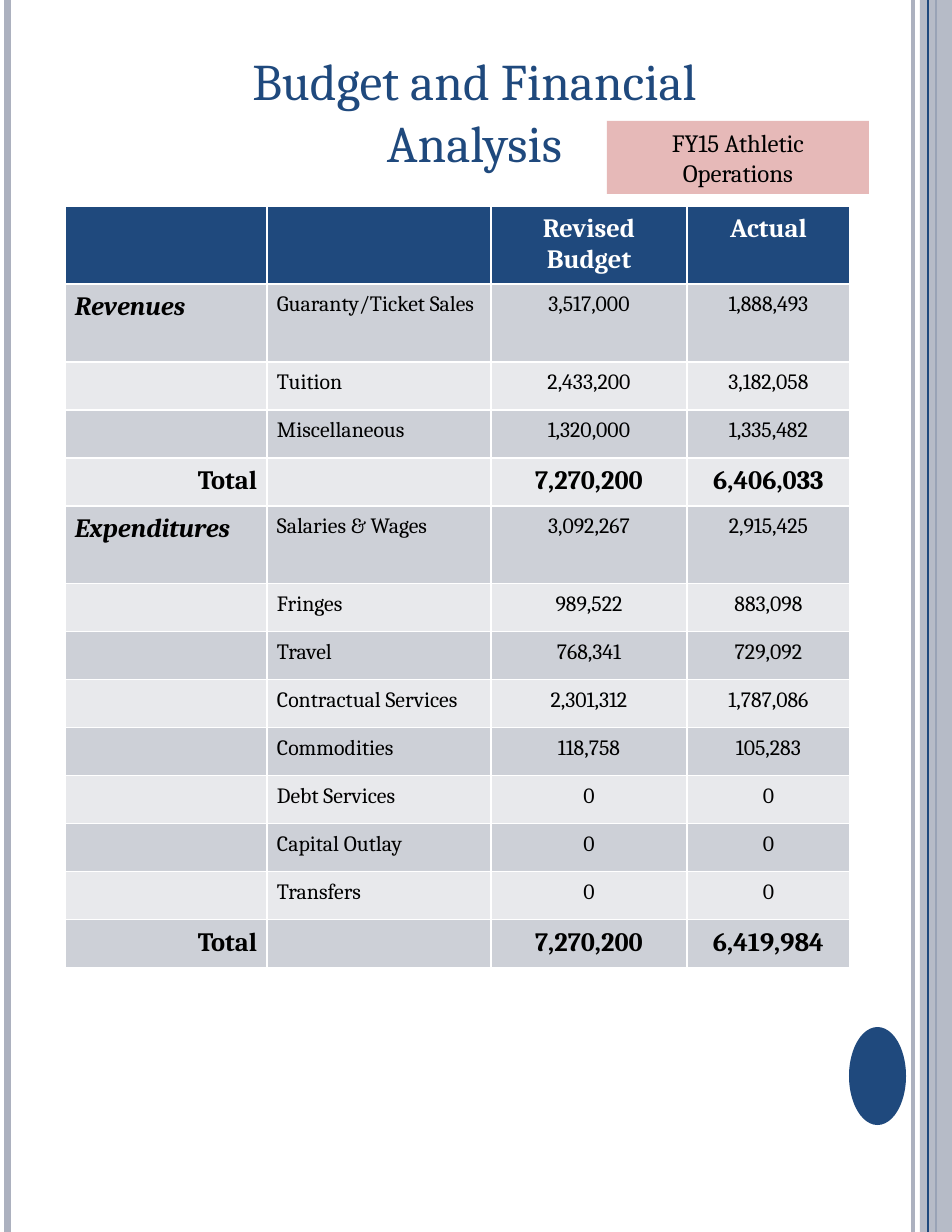
"""Build the FY15 athletic budget and financial analysis slide."""
from lxml.etree import SubElement
from pptx import Presentation
from pptx.dml.color import RGBColor
from pptx.enum.shapes import MSO_CONNECTOR as CONN, MSO_SHAPE as SHAPE
from pptx.enum.text import MSO_ANCHOR as ANCHOR, PP_ALIGN as ALIGN
from pptx.oxml.ns import qn
from pptx.util import Pt

PX = 914400 / 112
NAVY, GRAY, PINK, WHITE, BLACK = "1F497D", "ACB1BF", "E6B9B8", "FFFFFF", "000000"
BANDS = ["E8E9EC", "CDD0D7"]


def px(*values):
    return [round(v * PX) for v in values]


def write(tf, text, size, color=BLACK, align=ALIGN.CENTER, bold=False, italic=False,
          anchor=ANCHOR.TOP):
    tf.word_wrap = True
    tf.vertical_anchor = anchor
    p = tf.paragraphs[0]
    p.alignment = align
    r = p.add_run()
    r.text = text
    r.font.name, r.font.size = "Cambria", Pt(size)
    r.font.bold, r.font.italic = bold, italic
    r.font.color.rgb = RGBColor.from_string(color)


prs = Presentation()
prs.slide_width, prs.slide_height = px(952, 1232)
s = prs.slides.add_slide(prs.slide_layouts[5])

rules = {}
for name, x, color, width in [("right", 913, GRAY, 3), ("left", 8, GRAY, 4.5),
                              ("band edge", 936, NAVY, 1.5), ("band", 928, NAVY, 0.75)]:
    line = s.shapes.add_connector(CONN.STRAIGHT, *px(x, 0, x, 1232))
    line.line.color.rgb = RGBColor.from_string(color)
    line.line.width = Pt(width)
    SubElement(line._element.spPr, qn("a:effectLst"))
    rules[name] = line

shapes = {}
for name, kind, box, color in [("band", SHAPE.RECTANGLE, (920, 0, 32, 1232), GRAY),
                               ("oval", SHAPE.OVAL, (849, 1027, 57, 98), NAVY),
                               ("label", SHAPE.RECTANGLE, (607, 121, 262, 73), PINK)]:
    sp = s.shapes.add_shape(kind, *px(*box))
    sp.shadow.inherit = False
    sp.fill.solid()
    sp.fill.fore_color.rgb = RGBColor.from_string(color)
    sp.line.fill.background()
    shapes[name] = sp

band_color = shapes["band"]._element.spPr.find(qn("a:solidFill"))[0]
SubElement(band_color, qn("a:alpha")).set("val", "87000")
shapes["band"]._element.addnext(rules["band"]._element)

title = s.shapes.title
title.left, title.top, title.width, title.height = px(177, 47, 595, 128)
title.fill.solid()
title.fill.fore_color.rgb = RGBColor.from_string(WHITE)
write(title.text_frame, "Budget and Financial Analysis", 33, NAVY, anchor=ANCHOR.MIDDLE)

rows = [
    ("", "", "Revised Budget", "Actual"),
    ("Revenues", "Guaranty/Ticket Sales", "3,517,000", "1,888,493"),
    ("", "Tuition", "2,433,200", "3,182,058"),
    ("", "Miscellaneous", "1,320,000", "1,335,482"),
    ("Total", "", "7,270,200", "6,406,033"),
    ("Expenditures", "Salaries & Wages", "3,092,267", "2,915,425"),
    ("", "Fringes", "989,522", "883,098"),
    ("", "Travel", "768,341", "729,092"),
    ("", "Contractual Services", "2,301,312", "1,787,086"),
    ("", "Commodities", "118,758", "105,283"),
    ("", "Debt Services", "0", "0"),
    ("", "Capital Outlay", "0", "0"),
    ("", "Transfers", "0", "0"),
    ("Total", "", "7,270,200", "6,419,984"),
]
table = s.shapes.add_table(len(rows), 4, *px(65, 206, 785, 762)).table
for column, width in zip(table.columns, px(202, 224, 196, 163)):
    column.width = width

for i, row in enumerate(rows):
    header, total = i == 0, row[0] == "Total"
    section = row[0] in ("Revenues", "Expenditures")
    table.rows[i].height = px(78 if header or section else 48)[0]
    for j, text in enumerate(row):
        cell = table.cell(i, j)
        cell.fill.solid()
        cell.fill.fore_color.rgb = RGBColor.from_string(NAVY if header else BANDS[i % 2])
        if not text:
            continue
        cell.margin_left, cell.margin_right, cell.margin_top, cell.margin_bottom = px(10, 10, 8, 8)
        strong = header or total or j == 0
        align = ALIGN.CENTER if j > 1 else ALIGN.RIGHT if total else ALIGN.LEFT
        write(cell.text_frame, text, 17 if strong else 14, WHITE if header else BLACK,
              align, bold=strong, italic=section and j == 0)

label = shapes["label"]
s.shapes._spTree.append(label._element)
tf = label.text_frame
tf.margin_left, tf.margin_right, tf.margin_top, tf.margin_bottom = px(12, 12, 7, 7)
write(tf, "FY15 Athletic Operations", 16)

prs.save("out.pptx")
